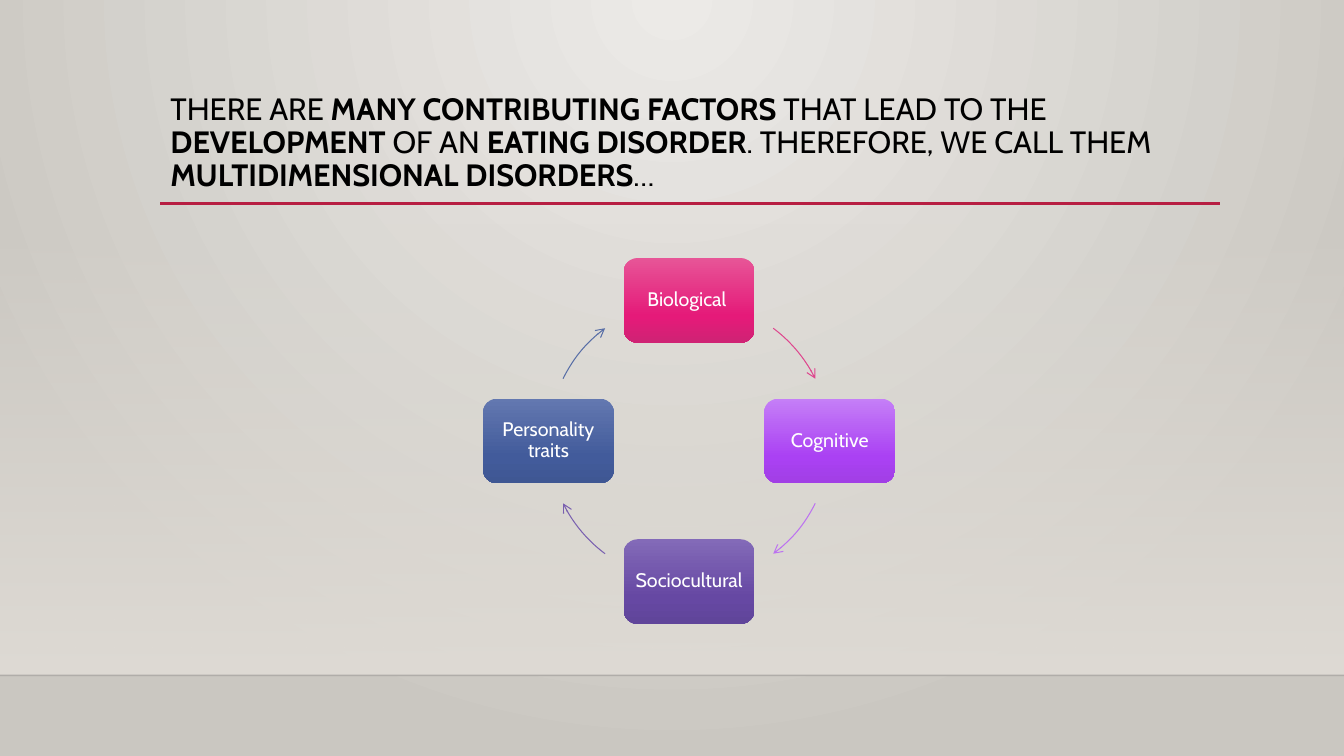
"""Build a slide showing the cycle of factors behind eating disorders."""
import math

from lxml import etree
from pptx import Presentation
from pptx.dml.color import RGBColor
from pptx.enum import shapes, text
from pptx.oxml import ns
from pptx.util import Inches, Pt

FONT = "Cabin"
BLACK = RGBColor(0x00, 0x00, 0x00)
WHITE = RGBColor(0xFF, 0xFF, 0xFF)
RED = RGBColor(0xB7, 0x1E, 0x42)
EDGE = RGBColor(0x00, 0x00, 0x01)
BACK_LIGHT = RGBColor(0xEC, 0xEA, 0xE7)
BACK_DARK = RGBColor(0xCA, 0xC7, 0xC1)
WALL = RGBColor(0xDF, 0xDB, 0xD5)
PINKS = [RGBColor(0xE7, 0x55, 0x97), RGBColor(0xE5, 0x1A, 0x79), RGBColor(0xCF, 0x23, 0x74)]
VIOLETS = [RGBColor(0xC5, 0x7F, 0xF7), RGBColor(0xAA, 0x41, 0xF3), RGBColor(0xA1, 0x3F, 0xE5)]
PURPLES = [RGBColor(0x83, 0x6A, 0xB8), RGBColor(0x66, 0x48, 0xA3), RGBColor(0x60, 0x45, 0x9A)]
BLUES = [RGBColor(0x63, 0x78, 0xB0), RGBColor(0x42, 0x5B, 0x9B), RGBColor(0x3F, 0x57, 0x93)]
PINK_LINE = RGBColor(0xDE, 0x47, 0x8E)
VIOLET_LINE = RGBColor(0xBC, 0x72, 0xF0)
PURPLE_LINE = RGBColor(0x79, 0x5F, 0xAF)
BLUE_LINE = RGBColor(0x58, 0x6E, 0xA6)

CYCLE_LEFT, CYCLE_TOP, DIAMETER = 5.44, 2.98, 2.79
RADIUS = DIAMETER / 2
CARD_W, CARD_H = 1.3, 0.84
ARC_SPAN = 27

TITLE = [
    ("THERE ARE ", False),
    ("MANY CONTRIBUTING FACTORS ", True),
    ("THAT LEAD TO THE ", False),
    ("DEVELOPMENT", True),
    (" OF AN ", False),
    ("EATING DISORDER", True),
    (". THEREFORE, WE CALL THEM ", False),
    ("MULTIDIMENSIONAL DISORDERS", True),
    ("…", False),
]
FACTORS = [
    ("Biological ", 270, PINKS, 306.7, PINK_LINE),
    ("Cognitive", 0, VIOLETS, 26.3, VIOLET_LINE),
    ("Sociocultural ", 90, PURPLES, 126.7, PURPLE_LINE),
    ("Personality traits", 180, BLUES, 206.3, BLUE_LINE),
]


def add_child(parent, tag, **attrs):
    """Append a DrawingML element and return it."""
    return etree.SubElement(parent, ns.qn("a:" + tag), {k: str(v) for k, v in attrs.items()})


def set_gradient(fill, root, stops, radial=False):
    """Fill with (position, colour, opacity) stops, downwards or from the top centre."""
    fill.gradient()
    grad = root.find(".//" + ns.qn("a:gradFill"))
    for child in list(grad):
        grad.remove(child)
    gs_list = add_child(grad, "gsLst")
    for position, color, opacity in stops:
        gs = add_child(gs_list, "gs", pos=position * 1000)
        clr = add_child(gs, "srgbClr", val=color)
        if opacity < 100:
            add_child(clr, "alpha", val=opacity * 1000)
    if radial:
        circle = add_child(grad, "path", path="circle")
        add_child(circle, "fillToRect", l=43000, t=0, r=43000, b=100000)
    else:
        add_child(grad, "lin", ang=5400000, scaled=0)


def add_rule(s, left, right, y, color, width, opacity=100):
    """Draw a horizontal line."""
    cn = s.shapes.add_connector(
        shapes.MSO_CONNECTOR.STRAIGHT, Inches(left), Inches(y), Inches(right), Inches(y))
    cn.line.color.rgb = color
    cn.line.width = Pt(width)
    add_child(cn._element.spPr, "effectLst")
    if opacity < 100:
        clr = cn._element.spPr.find(".//" + ns.qn("a:srgbClr"))
        add_child(clr, "alpha", val=opacity * 1000)


def add_backdrop(s):
    """Paint the background, the wall and its lower edge."""
    set_gradient(s.background.fill, s._element,
                 [(0, BACK_LIGHT, 100), (100, BACK_DARK, 100)], radial=True)
    sp = s.shapes.add_shape(
        shapes.MSO_SHAPE.RECTANGLE, 0, Inches(2.21), Inches(13.33), Inches(4.49))
    sp.shadow.inherit = False
    sp.line.fill.background()
    set_gradient(sp.fill, sp._element, [(0, WALL, 0), (100, WALL, 100)])
    add_rule(s, 0, 13.33, 6.7, EDGE, 1, opacity=20)


def style_run(r, size, color, bold=False):
    """Set the font of a run."""
    r.font.name = FONT
    r.font.size = Pt(size)
    r.font.bold = bold
    r.font.color.rgb = color


def fill_title(s):
    """Place the title above the backdrop and write its runs."""
    title = s.shapes.title
    s.shapes._spTree.append(title._element)
    title.left, title.top = Inches(1.59), Inches(0.88)
    title.width, title.height = Inches(10.5), Inches(1.15)
    tf = title.text_frame
    tf.word_wrap = True
    tf.auto_size = text.MSO_AUTO_SIZE.NONE
    tf.vertical_anchor = text.MSO_ANCHOR.TOP
    p = tf.paragraphs[0]
    p.alignment = text.PP_ALIGN.LEFT
    p.line_spacing = 0.9
    p.space_before = Pt(0)
    for words, bold in TITLE:
        r = p.add_run()
        r.text = words
        style_run(r, 22, BLACK, bold)


def add_card(s, label, degrees, colors):
    """Add a rounded card centred on the cycle."""
    angle = math.radians(degrees)
    x = CYCLE_LEFT + RADIUS * (1 + math.cos(angle))
    y = CYCLE_TOP + RADIUS * (1 + math.sin(angle))
    sp = s.shapes.add_shape(
        shapes.MSO_SHAPE.ROUNDED_RECTANGLE, Inches(x - CARD_W / 2), Inches(y - CARD_H / 2),
        Inches(CARD_W), Inches(CARD_H))
    sp.shadow.inherit = False
    sp.line.fill.background()
    set_gradient(sp.fill, sp._element, [(pos, c, 100) for pos, c in zip((0, 69, 100), colors)])
    tf = sp.text_frame
    tf.word_wrap = True
    tf.vertical_anchor = text.MSO_ANCHOR.MIDDLE
    tf.margin_left = tf.margin_right = tf.margin_top = tf.margin_bottom = Inches(0.06)
    tf.text = label
    p = tf.paragraphs[0]
    p.alignment = text.PP_ALIGN.CENTER
    p.line_spacing = 0.9
    style_run(p.runs[0], 14, WHITE)


def add_arc_arrow(s, start, color):
    """Draw a clockwise arc of the cycle with an arrowhead."""
    sp = s.shapes.add_shape(
        shapes.MSO_SHAPE.ARC, Inches(CYCLE_LEFT), Inches(CYCLE_TOP),
        Inches(DIAMETER), Inches(DIAMETER))
    for i, degrees in enumerate((start, start + ARC_SPAN)):
        sp.adjustments[i] = degrees * 60000 / 100000
    sp.shadow.inherit = False
    sp.fill.background()
    sp.line.color.rgb = color
    sp.line.width = Pt(0.75)
    add_child(sp.line._get_or_add_ln(), "tailEnd", type="arrow")


def main():
    """Build and save the slide."""
    prs = Presentation()
    prs.slide_width, prs.slide_height = Inches(13.33), Inches(7.5)
    s = prs.slides.add_slide(prs.slide_layouts[5])
    add_backdrop(s)
    add_rule(s, 1.59, 12.1, 2.02, RED, 2.5)
    fill_title(s)
    for label, angle, colors, arc_start, arc_color in FACTORS:
        add_card(s, label, angle, colors)
        add_arc_arrow(s, arc_start, arc_color)
    prs.save("out.pptx")


if __name__ == "__main__":
    main()
